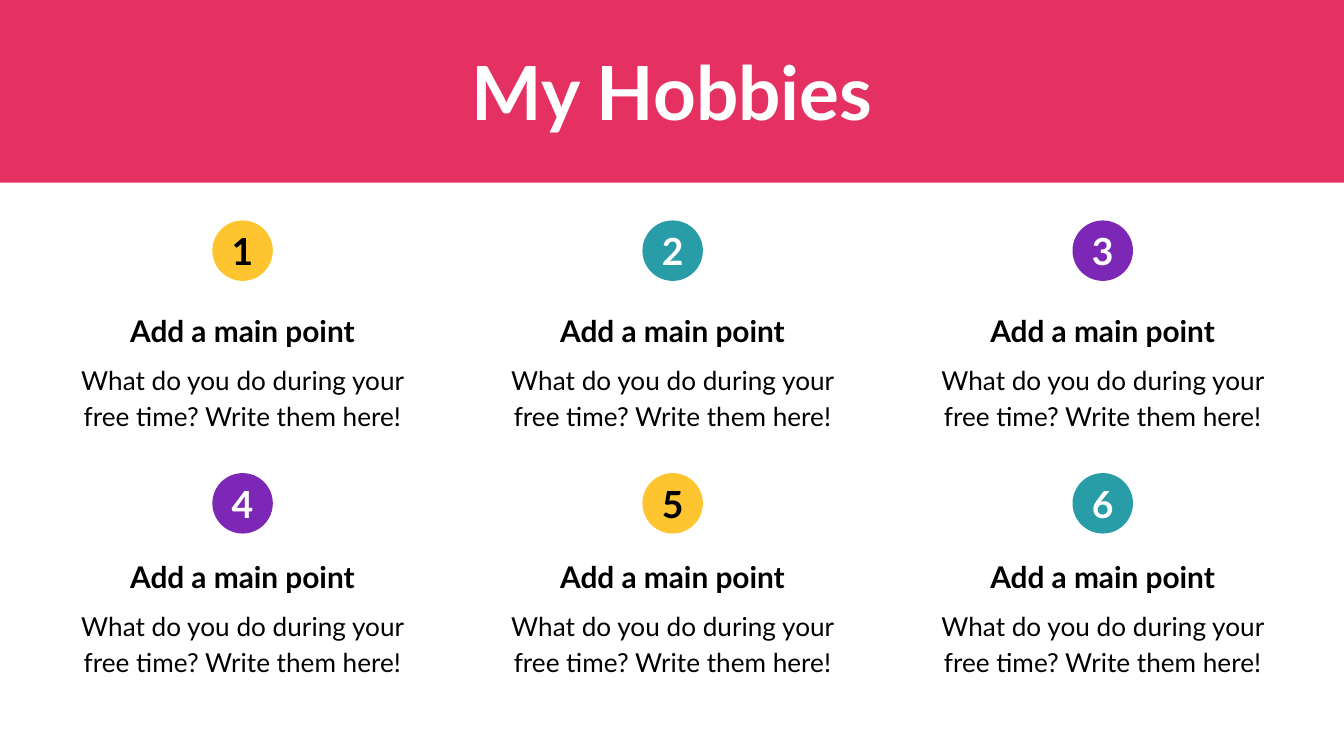
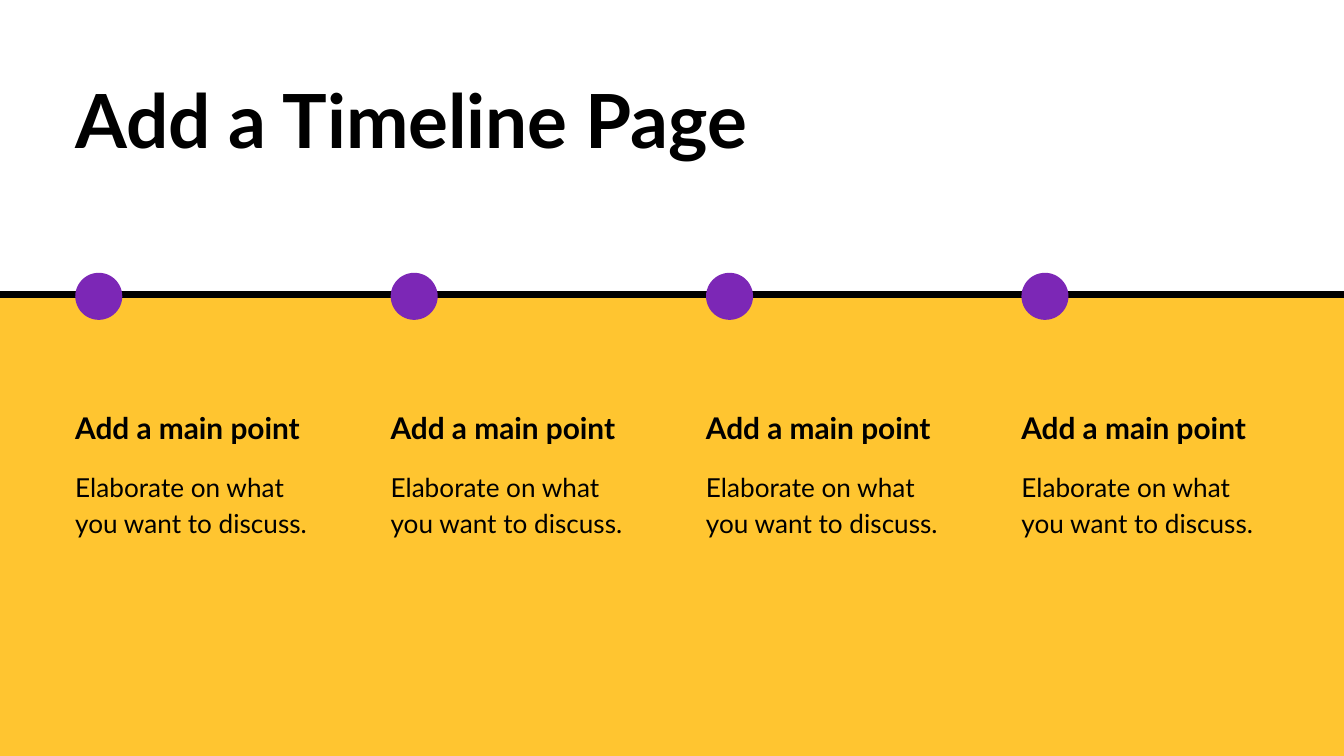
from lxml.etree import SubElement
from pptx import Presentation
from pptx.dml.color import RGBColor
from pptx.enum.shapes import MSO_CONNECTOR, MSO_SHAPE
from pptx.enum.text import MSO_ANCHOR, MSO_AUTO_SIZE, PP_ALIGN
from pptx.oxml.ns import qn
from pptx.util import Inches, Pt

FONT = "Lato"
BLACK, WHITE = "000000", "FFFFFF"
PINK, GOLD, TEAL, PURPLE = "E43161", "FFC530", "289DA8", "7C27B6"
WIDE = 10
HIGH = WIDE * 9 / 16
EDGE = 0.56
LEFT, MID = PP_ALIGN.LEFT, PP_ALIGN.CENTER
POINT = "Add a main point"


def color(code):
    return RGBColor.from_string(code)


def write(frame, words, size, ink=BLACK, bold=False, align=LEFT, lead=None):
    """Put one paragraph in a text frame that has no margins."""
    frame.margin_left = frame.margin_right = 0
    frame.margin_top = frame.margin_bottom = 0
    para = frame.paragraphs[0]
    para.alignment = align
    if lead:
        para.line_spacing = lead
    run = para.add_run()
    run.text = words
    font = run.font
    font.name, font.size, font.bold = FONT, Pt(size), bold
    font.color.rgb = color(ink)


def label(shapes, x, y, w, h, words, size, **style):
    box = shapes.add_textbox(Inches(x), Inches(y), Inches(w), Inches(h))
    frame = box.text_frame
    frame.word_wrap = True
    frame.auto_size = MSO_AUTO_SIZE.SHAPE_TO_FIT_TEXT
    write(frame, words, size, **style)


def solid(shapes, kind, x, y, w, h, fill):
    shape = shapes.add_shape(kind, Inches(x), Inches(y), Inches(w), Inches(h))
    shape.shadow.inherit = False
    shape.fill.solid()
    shape.fill.fore_color.rgb = color(fill)
    shape.line.fill.background()
    return shape


def band(shapes, y, h, fill):
    solid(shapes, MSO_SHAPE.RECTANGLE, 0, y, WIDE, h, fill)


def disc(shapes, x, y, size, fill):
    return solid(shapes, MSO_SHAPE.OVAL, x, y, size, size, fill)


def title(shapes, y, words, **style):
    label(shapes, EDGE, y, WIDE - 2 * EDGE, 0.67, words, 40, bold=True, **style)


def note(shapes, x, y, w, gap, words, align=LEFT, lead=None):
    """Group a bold heading with the text that starts gap below its top."""
    group = shapes.add_group_shape().shapes
    label(group, x, y, w, 0.27, POINT, 16, bold=True, align=align, lead=lead)
    label(group, x, y + gap, w, 0.51, words, 14, align=align, lead=1.15)


def badge(shapes, mid, y, num, fill):
    size = 0.45
    frame = disc(shapes, mid - size / 2, y, size, fill).text_frame
    frame.word_wrap = False
    frame.vertical_anchor = MSO_ANCHOR.MIDDLE
    ink = BLACK if fill == GOLD else WHITE
    write(frame, str(num), 20, ink=ink, bold=True, align=MID)


def hobby(shapes, x, y, w, drop, num, fill):
    """Place a badge with its note, which starts drop below the badge top."""
    badge(shapes, x + w / 2, y, num, fill)
    note(shapes, x, y + drop, w, 0.39,
         "What do you do during your free time? Write them here!",
         align=MID, lead=1.15)


def hobbies(shapes):
    band(shapes, 0, 1.36, PINK)
    title(shapes, 0.34, "My Hobbies", ink=WHITE, align=MID)
    rows = [(1.64, 0.65, (GOLD, TEAL, PURPLE)),
            (3.52, 0.6, (PURPLE, GOLD, TEAL))]
    for row, (y, drop, fills) in enumerate(rows):
        for col, fill in enumerate(fills):
            num = row * len(fills) + col + 1
            hobby(shapes, 0.57 + 3.2 * col, y, 2.47, drop, num, fill)


def rule(shapes, y):
    line = shapes.add_connector(MSO_CONNECTOR.STRAIGHT, 0, Inches(y),
                                Inches(WIDE), Inches(y))
    line.line.color.rgb = color(BLACK)
    line.line.width = Pt(3.75)
    SubElement(line._element.spPr, qn("a:effectLst"))


def timeline(shapes):
    top, count, w = 2.2, 4, 1.84
    step = (WIDE - 2 * EDGE - w) / (count - 1)
    band(shapes, top, HIGH - top, GOLD)
    rule(shapes, 2.19)
    title(shapes, 0.55, "Add a Timeline Page")
    for col in range(count):
        x = EDGE + step * col
        disc(shapes, x, 2.03, 0.35, PURPLE)
        note(shapes, x, 3.05, w, 0.42, "Elaborate on what you want to discuss.")


def main():
    deck = Presentation()
    deck.slide_width, deck.slide_height = Inches(WIDE), Inches(HIGH)
    for build in (hobbies, timeline):
        slide = deck.slides.add_slide(deck.slide_layouts[6])
        slide.background.fill.solid()
        slide.background.fill.fore_color.rgb = color(WHITE)
        build(slide.shapes)
    deck.save("out.pptx")


if __name__ == "__main__":
    main()
